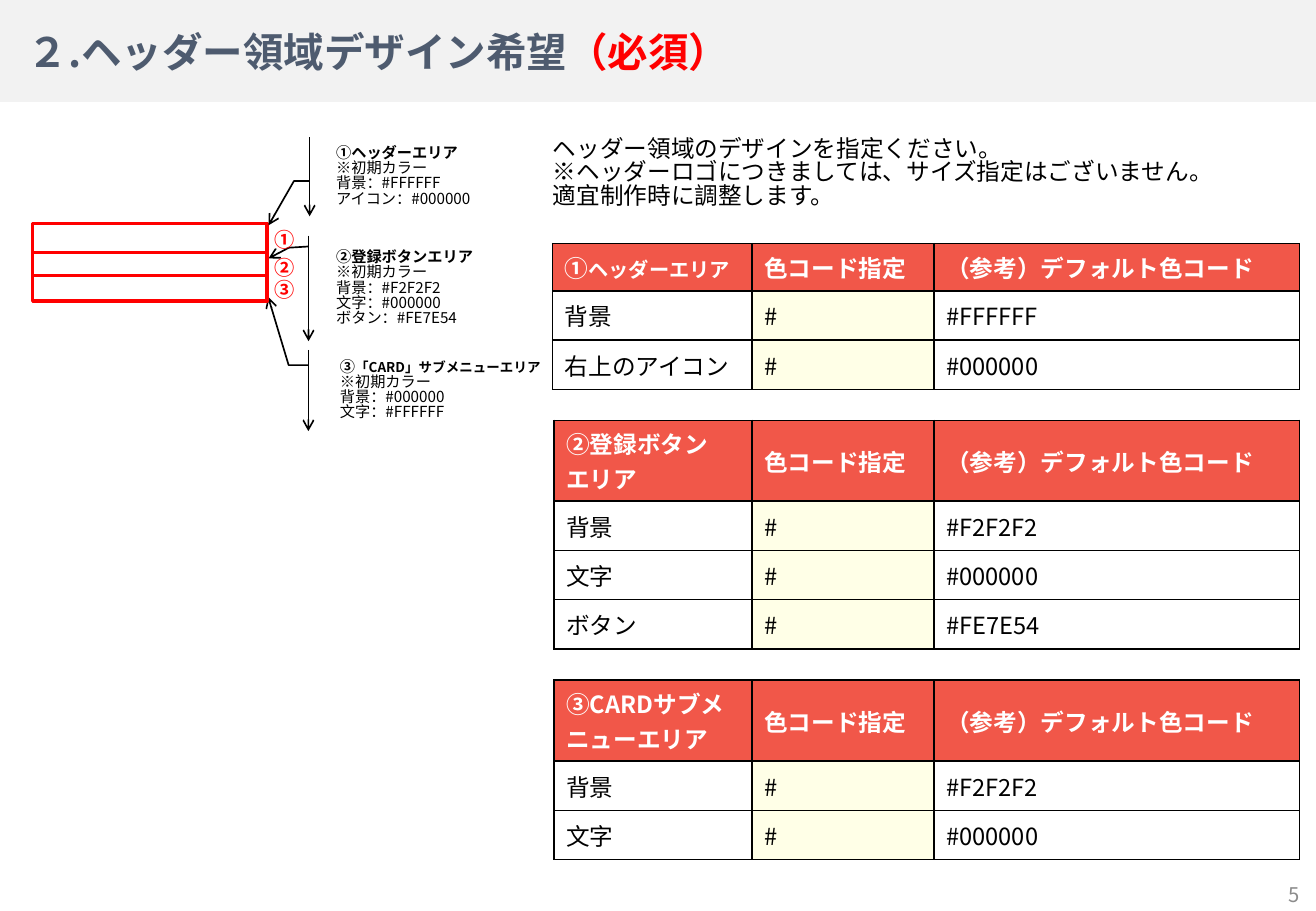
from collections import namedtuple

from lxml.etree import SubElement
from pptx import Presentation
from pptx.dml.color import RGBColor
from pptx.enum.shapes import MSO_SHAPE as Preset
from pptx.enum.text import MSO_ANCHOR as Anchor, PP_ALIGN as Align
from pptx.oxml.ns import qn
from pptx.util import Pt

FONT = "Noto Sans CJK JP"
BLACK = RGBColor(0, 0, 0)
WHITE = RGBColor(255, 255, 255)
RED = RGBColor(255, 0, 0)
BAND = RGBColor(0xF2, 0xF2, 0xF2)
SLATE = RGBColor(0x4E, 0x5B, 0x6F)
GRAY = RGBColor(0x8C, 0x8C, 0x8C)
CORAL = RGBColor(0xF1, 0x57, 0x49)
CREAM = RGBColor(0xFF, 0xFF, 0xE7)

TABLE_RIGHT = 770.4
CODE_WIDTH, DEFAULT_WIDTH = 108, 216.7
ROW_HEIGHT = 29.2
TIGHT = 0.83

Span = namedtuple("Span", "text size color bold", defaults=(BLACK, False))


def add_run(paragraph, span):
    """Add one formatted run to a paragraph."""
    run = paragraph.add_run()
    run.text = span.text
    run.font.name = FONT
    run.font.size = Pt(span.size)
    run.font.bold = span.bold
    run.font.color.rgb = span.color
    SubElement(run.font._element, qn("a:ea"), typeface=FONT)


def fill_text(frame, lines, spacing=None, align=Align.LEFT):
    """Write lines of spans, one paragraph per line."""
    for index, spans in enumerate(lines):
        paragraph = frame.add_paragraph() if index else frame.paragraphs[0]
        paragraph.alignment = align
        if spacing:
            paragraph.line_spacing = spacing
        for span in spans:
            add_run(paragraph, span)


def add_text(slide, box, lines, inset=4.3, wrap=True, **layout):
    """Add a vertically centred text box."""
    frame = slide.shapes.add_textbox(*map(Pt, box)).text_frame
    frame.word_wrap = wrap
    frame.vertical_anchor = Anchor.MIDDLE
    frame.margin_left = frame.margin_right = Pt(inset)
    frame.margin_top = frame.margin_bottom = Pt(inset)
    fill_text(frame, lines, **layout)


def add_outline(slide, preset, box, color, width):
    """Add an unfilled preset shape with a plain outline."""
    shape = slide.shapes.add_shape(preset, *map(Pt, box))
    shape.shadow.inherit = False
    shape.fill.background()
    shape.line.color.rgb = color
    shape.line.width = Pt(width)
    return shape


def add_band(slide):
    """Add the pale band behind the title."""
    band = slide.shapes.add_shape(Preset.RECTANGLE, 0, 0, Pt(780), Pt(60.5))
    band.shadow.inherit = False
    band.fill.solid()
    band.fill.fore_color.rgb = BAND
    band.line.fill.background()


def add_callout(slide, box, adjustments, heading, details):
    """Add an accent callout with an arrow at its pointer."""
    shape = add_outline(slide, Preset.LINE_CALLOUT_2_ACCENT_BAR, box, BLACK, 1)
    for index, value in enumerate(adjustments):
        shape.adjustments[index] = value
    SubElement(shape.line._get_or_add_ln(), qn("a:tailEnd"), type="arrow")
    frame = shape.text_frame
    frame.word_wrap = True
    frame.vertical_anchor = Anchor.MIDDLE
    frame.margin_right = 0
    lines = [heading] + [[Span(text, 9)] for text in ("※初期カラー", *details)]
    fill_text(frame, lines, TIGHT)


def style_cell(cell, lines, color):
    """Write a cell and give it a border and a fill."""
    cell.vertical_anchor = Anchor.MIDDLE
    fill_text(cell.text_frame, lines)
    properties = cell._tc.get_or_add_tcPr()
    for side in ("a:lnL", "a:lnR", "a:lnT", "a:lnB"):
        border = SubElement(properties, qn(side), w=str(Pt(1)))
        solid = SubElement(border, qn("a:solidFill"))
        SubElement(solid, qn("a:srgbClr"), val=str(BLACK))
    cell.fill.solid()
    cell.fill.fore_color.rgb = color


def add_color_table(slide, top, label_width, header_height, title, defaults):
    """Add a table of area parts with their default colour codes."""
    widths = (label_width, CODE_WIDTH, DEFAULT_WIDTH)
    heights = [header_height] + [ROW_HEIGHT] * len(defaults)
    left = TABLE_RIGHT - sum(widths)
    box = (left, top, sum(widths), sum(heights))
    table = slide.shapes.add_table(len(heights), 3, *map(Pt, box)).table
    for column, width in zip(table.columns, widths):
        column.width = Pt(width)
    for row, height in zip(table.rows, heights):
        row.height = Pt(height)
    headings = [[[Span(text, 14, WHITE, True)]] for text in ("色コード指定", "（参考）デフォルト色コード")]
    for column, lines in enumerate([title, *headings]):
        style_cell(table.cell(0, column), lines, CORAL)
    for row, (part, code) in enumerate(defaults, 1):
        for column, (text, color) in enumerate(((part, WHITE), ("#", CREAM), (code, WHITE))):
            style_cell(table.cell(row, column), [[Span(text, 14)]], color)


def add_header_sketch(slide):
    """Add the three stacked header areas, their callouts and numbers."""
    add_outline(slide, Preset.RECTANGLE, (19.4, 132.5, 139, 17.3), RED, 2)
    add_callout(slide, (192.2, 81.4, 112.3, 46.8),
                (0.554, -0.077, 0.554, -0.16, 1.114, -0.294),
                [Span("①ヘッダーエリア", 9, BLACK, True)],
                ("背景：#FFFFFF", "アイコン：#000000"))
    add_callout(slide, (192.2, 139.7, 112.3, 62.6),
                (0.103, -0.083, 0.115, -0.187, 0.216, -0.294),
                [Span("②登録ボタンエリア", 9, BLACK, True)],
                ("背景：#F2F2F2", "文字：#000000", "ボタン：#FE7E54"))
    add_callout(slide, (194.4, 207.4, 139.7, 48.2),
                (0.188, -0.083, 0.188, -0.167, -0.652, -0.254),
                [Span("③", 9, BLACK, True),
                 Span("「CARD」サブメニューエリア", 8, BLACK, True)],
                ("背景：#000000", "文字：#FFFFFF"))
    for top, height in ((149.8, 13.7), (163.4, 15.1)):
        add_outline(slide, Preset.RECTANGLE, (19.4, top, 139, height), RED, 2)
    for number, top in (("①", 131), ("②", 147.6), ("③", 160.6)):
        add_text(slide, (158.4, top, 20.2, 22.3), [[Span(number, 12, RED, True)]])


def main():
    """Build the header design request slide."""
    presentation = Presentation()
    presentation.slide_width, presentation.slide_height = Pt(780), Pt(540)
    slide = presentation.slides.add_slide(presentation.slide_layouts[6])
    add_band(slide)
    add_header_sketch(slide)
    guidance = ("ヘッダー領域のデザインを指定ください。",
                "※ヘッダーロゴにつきましては、サイズ指定はございません。",
                "適宜制作時に調整します。")
    add_text(slide, (323.3, 73.4, 456, 59),
             [[Span(text, 14)] for text in guidance], spacing=TIGHT)
    add_text(slide, (9.4, 12.2, 700.6, 36.7),
             [[Span("２.ヘッダー領域デザイン希望", 24, SLATE, True),
               Span("（必須）", 24, RED, True)]], inset=7.2)
    add_text(slide, (763.2, 522.7, 7.9, 14.4), [[Span("5", 12, GRAY)]],
             inset=0, wrap=False, align=Align.CENTER)
    add_color_table(slide, 144.4, 118.1, 28,
                    [[Span("①", 14, WHITE, True), Span("ヘッダーエリア", 12, WHITE, True)]],
                    [("背景", "#FFFFFF"), ("右上のアイコン", "#000000")])
    add_color_table(slide, 249.1, 117.4, 48,
                    [[Span(text, 14, WHITE, True)] for text in ("②登録ボタン", "エリア")],
                    [("背景", "#F2F2F2"), ("文字", "#000000"), ("ボタン", "#FE7E54")])
    add_color_table(slide, 403.2, 117.4, 48,
                    [[Span("③CARDサブメニューエリア", 14, WHITE, True)]],
                    [("背景", "#F2F2F2"), ("文字", "#000000")])
    presentation.save("out.pptx")


if __name__ == "__main__":
    main()
